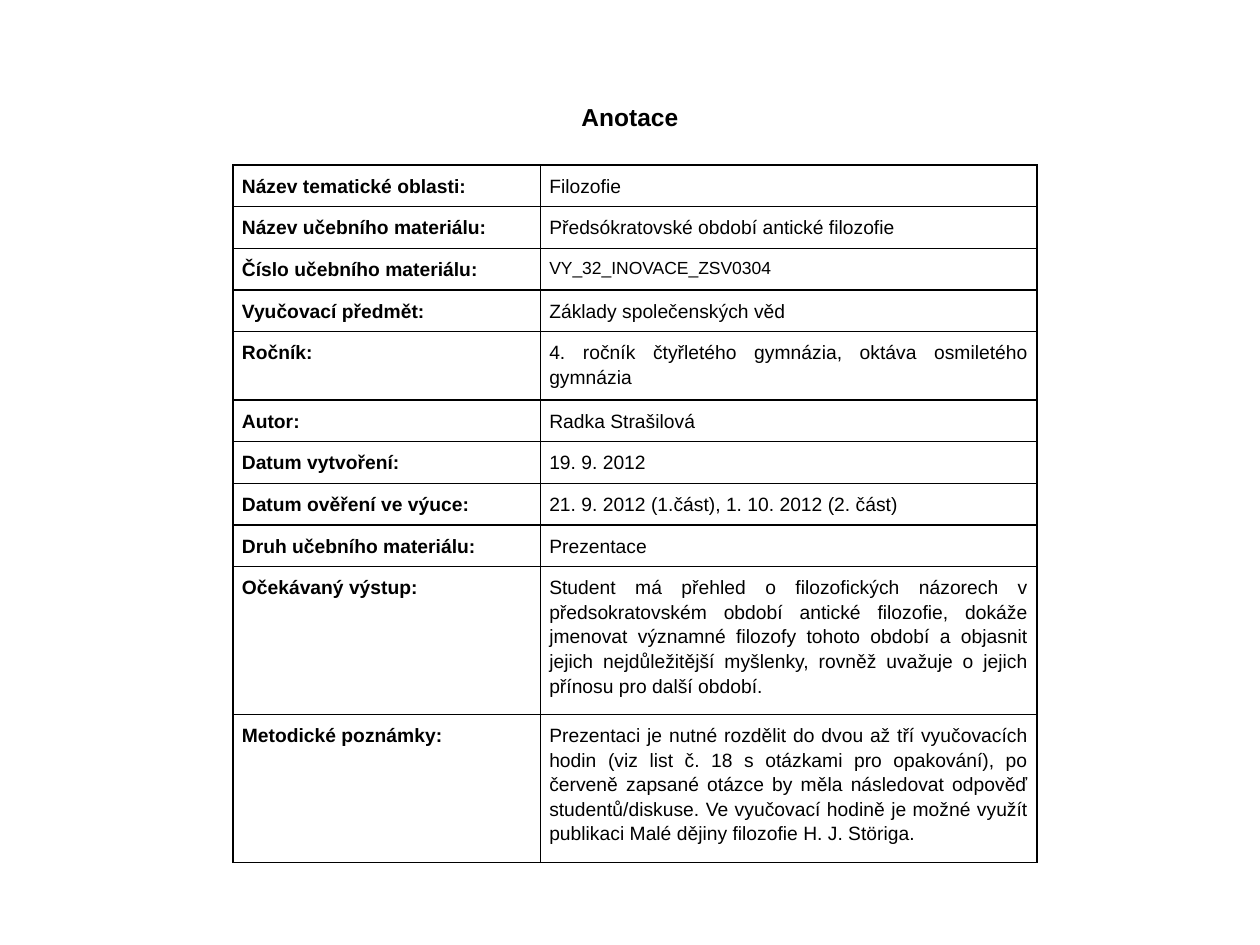
from lxml.etree import SubElement
from pptx import Presentation
from pptx.dml.color import RGBColor
from pptx.enum.text import MSO_ANCHOR, PP_ALIGN
from pptx.oxml.ns import qn
from pptx.util import Inches, Pt

BLACK = RGBColor(0x00, 0x00, 0x00)
LEFT, JUSTIFY = PP_ALIGN.LEFT, PP_ALIGN.JUSTIFY
CELL_FORMAT = {
    "margin_left": Inches(0.07),
    "margin_right": Inches(0.07),
    "margin_top": Inches(0.06),
    "margin_bottom": Inches(0.06),
    "vertical_anchor": MSO_ANCHOR.TOP,
}
ANNOTATIONS = [
    ("Název tematické oblasti:", "Filozofie", 0.33, LEFT),
    ("Název učebního materiálu:", "Předsókratovské období antické filozofie", 0.33, LEFT),
    ("Číslo učebního materiálu:", "VY_32_INOVACE_ZSV0304", 0.33, LEFT),
    ("Vyučovací předmět:", "Základy společenských věd", 0.33, LEFT),
    ("Ročník:", "4. ročník čtyřletého gymnázia, oktáva osmiletého gymnázia", 0.54, LEFT),
    ("Autor:", "Radka Strašilová", 0.33, LEFT),
    ("Datum vytvoření:", "19. 9. 2012", 0.33, LEFT),
    ("Datum ověření ve výuce:", "21. 9. 2012 (1.část), 1. 10. 2012 (2. část)", 0.33, LEFT),
    ("Druh učebního materiálu:", "Prezentace", 0.33, JUSTIFY),
    ("Očekávaný výstup:",
     "Student má přehled o filozofických názorech v předsokratovském období antické "
     "filozofie, dokáže jmenovat významné filozofy tohoto období a objasnit jejich "
     "nejdůležitější myšlenky, rovněž uvažuje o jejich přínosu pro další období.",
     1.17, JUSTIFY),
    ("Metodické poznámky:",
     "Prezentaci je nutné rozdělit do dvou až tří vyučovacích hodin (viz list č. 18 "
     "s otázkami pro opakování), po červeně zapsané otázce by měla následovat odpověď "
     "studentů/diskuse. Ve vyučovací hodině je možné využít publikaci Malé dějiny "
     "filozofie H. J. Störiga.",
     1.17, JUSTIFY),
]


def write_text(paragraph, text, size, bold, alignment):
    paragraph.alignment = alignment
    run = paragraph.add_run()
    run.text = text
    font_format = {"name": "Arial", "size": Pt(size), "bold": bold}
    for attribute, value in font_format.items():
        setattr(run.font, attribute, value)
    run.font.color.rgb = BLACK


def draw_borders(cell):
    properties = cell._tc.get_or_add_tcPr()
    for side in ("a:lnL", "a:lnR", "a:lnT", "a:lnB"):
        line = SubElement(properties, qn(side), w=str(Pt(1)))
        fill = SubElement(line, qn("a:solidFill"))
        SubElement(fill, qn("a:srgbClr"), val=str(BLACK))


prs = Presentation()
prs.slide_width, prs.slide_height = Inches(10), Inches(7.5)
slide = prs.slides.add_slide(prs.slide_layouts[6])

heading = slide.shapes.add_textbox(Inches(0), Inches(0.68), Inches(10), Inches(0.5))
heading.text_frame.word_wrap = False
heading.text_frame.vertical_anchor = MSO_ANCHOR.MIDDLE
write_text(heading.text_frame.paragraphs[0], "Anotace", 14, True, PP_ALIGN.CENTER)

annotation = slide.shapes.add_table(
    len(ANNOTATIONS), 2, Inches(1.85), Inches(1.31), Inches(6.38), Inches(5.52)
).table
annotation.first_row = False
annotation.horz_banding = False
for column, width in zip(annotation.columns, (2.44, 3.94)):
    column.width = Inches(width)

for row, (label, detail, height, label_alignment) in zip(annotation.rows, ANNOTATIONS):
    row.height = Inches(height)
    detail_size = 10 if detail.startswith("VY_") else 11
    contents = [(label, 11, True, label_alignment), (detail, detail_size, False, JUSTIFY)]
    for cell, content in zip(row.cells, contents):
        for attribute, value in CELL_FORMAT.items():
            setattr(cell, attribute, value)
        draw_borders(cell)
        cell.fill.background()
        paragraph = cell.text_frame.paragraphs[0]
        paragraph.line_spacing = 1.15
        write_text(paragraph, *content)

prs.save("out.pptx")
